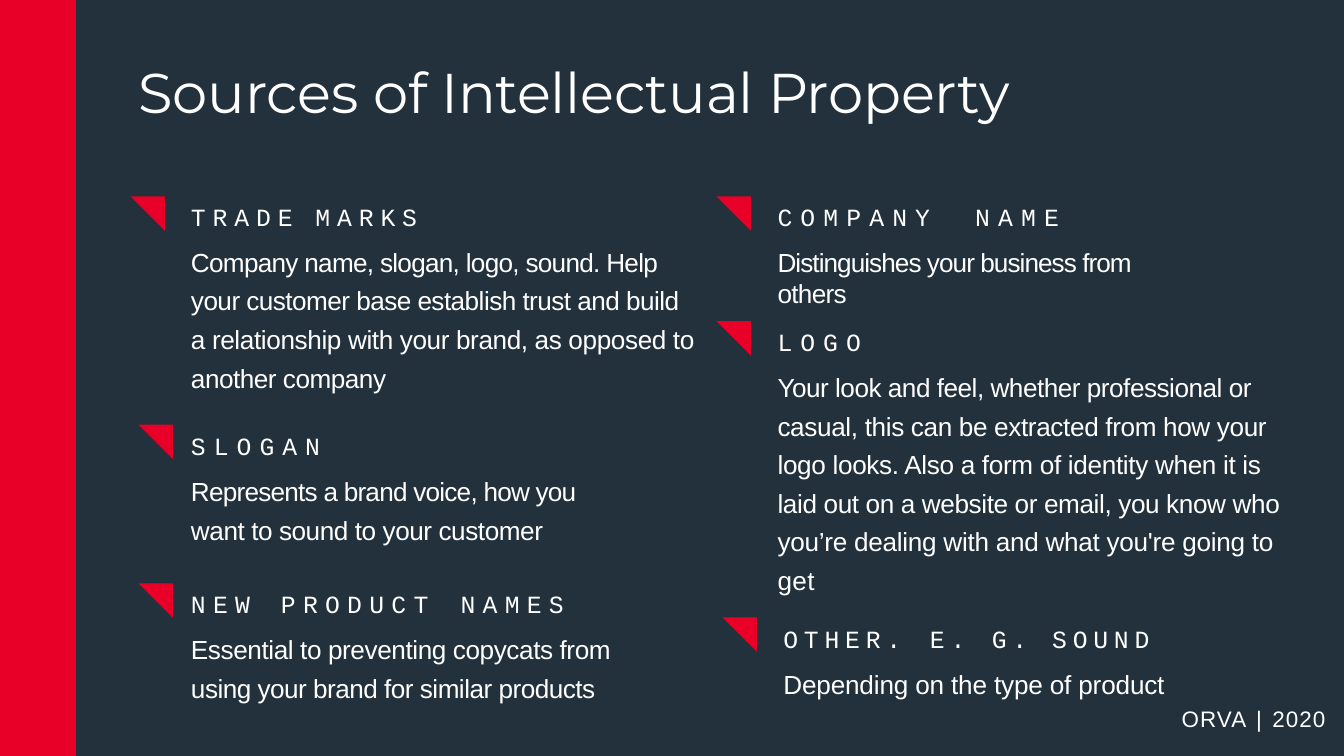
import pptx
import pptx.dml.color
import pptx.enum.shapes
import pptx.util
import lxml.etree
from pptx.util import Cm, Pt

NAVY, RED, WHITE = "23313C", "E90029", "FFFFFF"
A = "{http://schemas.openxmlformats.org/drawingml/2006/main}"
SHAPE = pptx.enum.shapes.MSO_SHAPE

# Format values: font attributes and paragraph attributes
FONTS = {
    "title": {"name": "Montserrat", "size": Pt(60)},
    "head": {"name": "Courier New", "size": Pt(26.5)},
    "body": {"name": "Arial", "size": Pt(28)},
    "foot": {"name": "Arial", "size": Pt(24)},
}
LOOSE = {"line_spacing": 1.23, "space_before": Pt(8.4)}


def color(value):
    return pptx.dml.color.RGBColor.from_string(value)


def add_text(s, box, inset, paras):
    """Each paragraph: font key, lines of (text, letter spacing), format, tab stops, indent."""
    tb = s.shapes.add_textbox(*[Cm(v) for v in box])
    tf = tb.text_frame
    frame = {"word_wrap": True, "margin_left": 0, "margin_right": 0,
             "margin_top": Cm(inset), "margin_bottom": 0}
    for key, value in frame.items():
        setattr(tf, key, value)
    for i, (font, lines, fmt, tabs, indent) in enumerate(paras):
        p = tf.add_paragraph() if i else tf.paragraphs[0]
        for key, value in fmt.items():
            setattr(p, key, value)
        pPr = p._p.get_or_add_pPr()
        pPr.set("marL", str(Cm(indent)))
        if tabs:
            lst = lxml.etree.SubElement(pPr, A + "tabLst")
            for pos in tabs:
                lxml.etree.SubElement(lst, A + "tab", pos=str(Cm(pos)), algn="l")
        for n, (text, spacing) in enumerate(lines):
            if n:
                p.add_line_break()
            r = p.add_run()
            r.text = text
            for key, value in FONTS[font].items():
                setattr(r.font, key, value)
            r.font.color.rgb = color(WHITE)
            r._r.get_or_add_rPr().set("spc", str(round(spacing * 100)))


prs = pptx.Presentation()
prs.slide_width, prs.slide_height = Cm(50.8), Cm(28.58)
s = prs.slides.add_slide(prs.slide_layouts[6])

# Dark panel, red side band and the corner markers beside each heading
shapes = [(SHAPE.RECTANGLE, (2.87, 0, 47.93, 28.58), NAVY),
          (SHAPE.RECTANGLE, (0, 0, 2.87, 28.58), RED)]
markers = [(4.93, 7.42), (5.23, 16.05), (5.23, 22.05),
           (27.08, 7.42), (27.08, 12.14), (27.31, 23.34)]
shapes += [(SHAPE.RIGHT_TRIANGLE, (x, y, 1.3, 1.3), RED) for x, y in markers]
for kind, box, fill in shapes:
    sp = s.shapes.add_shape(kind, *[Cm(v) for v in box])
    sp.shadow.inherit = False
    sp.fill.solid()
    sp.fill.fore_color.rgb = color(fill)
    sp.line.fill.background()
    if kind == SHAPE.RIGHT_TRIANGLE:
        sp.rotation = 180

# Title
add_text(s, (5.21, 2.13, 37.11, 2.62), 0.05, [
    ("title", [("Sources of Intellectual Property", -0.2)],
     {"space_before": Pt(1.1)}, [], 0.03)])

# Left column
add_text(s, (7.19, 7.04, 19.23, 19.61), 0.58, [
    ("head", [("TRADE\tMARKS", 7.4)], {"space_before": Pt(16.7)}, [4.7], 0.03),
    ("body", [("Company name, slogan, logo, sound. Help", -0.75),
              ("your customer base establish trust and build", -0.57),
              ("a relationship with your brand, as opposed to", -0.4),
              ("another company", -0.5)], LOOSE, [], 0.03),
    ("head", [("SLOGAN", 8.6)], {"space_before": Pt(40)}, [], 0.03),
    ("body", [("Represents a brand voice, how you", -0.8),
              ("want to sound to your customer", -0.45)], LOOSE, [], 0.03),
    ("head", [("NEW\tPRODUCT\tNAMES", 7.8)], {"space_before": Pt(47)},
     [3.4, 10.19], 0.03),
    ("body", [("Essential to preventing copycats from", -0.42),
              ("using your brand for similar products", -0.53)], LOOSE, [], 0.03)])

# Right column
add_text(s, (29.36, 7.04, 16.43, 3.51), 0.58, [
    ("head", [("COMPANY\tNAME", 8.7)], {"space_before": Pt(16.7)}, [7.47], 0.03),
    ("body", [("Distinguishes your business from", -1), ("others", -0.7)],
     {"space_before": Pt(16.1)}, [], 0.03)])
add_text(s, (29.36, 12.32, 3.91, 1.19), 0.05, [
    ("head", [("LOGO", 8.6)], {"space_before": Pt(1.3)}, [], 0.03)])
add_text(s, (29.36, 13.74, 19.1, 12.73), 0.03, [
    ("body", [("Your look and feel, whether professional or", -0.5),
              ("casual, this can be extracted from how your", -0.37),
              ("logo looks. Also a form of identity when it is", -0.34),
              ("laid out on a website or email, you know who", -0.41),
              ("you’re dealing with and what you're going to", -0.27),
              ("get", 0.5)],
     {"line_spacing": 1.23, "space_before": Pt(0.9)}, [], 0.03),
    ("head", [("OTHER.\tE. G.\tSOUND", 6.2)], {"space_before": Pt(30)},
     [5.54, 8.76], 0.25),
    ("body", [("Depending on the type of product", -0.18)],
     {"space_before": Pt(16.1)}, [], 0.25)])

# Footer
add_text(s, (44.63, 26.82, 5.66, 0.91), 0, [
    ("foot", [("ORVA\t|\t", 0.2), ("2020", 2.1)][:0] or [("ORVA\t|\t2020", 1.2)],
     {"line_spacing": Pt(23.8)}, [2.82, 3.43], 0.03)])

prs.save("out.pptx")
